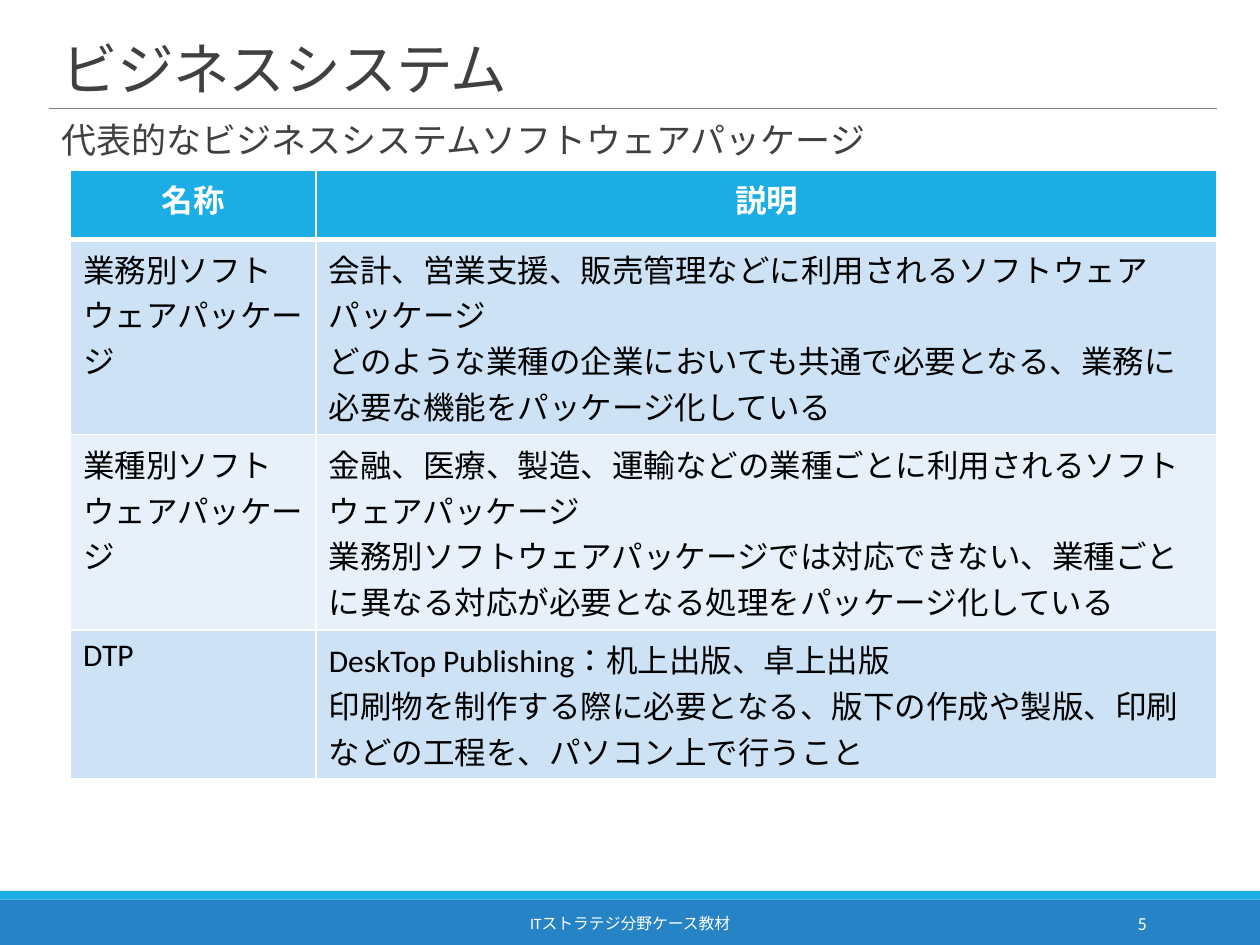
from typing import NamedTuple

from lxml.etree import SubElement
from pptx import Presentation
from pptx.dml.color import RGBColor
from pptx.enum.lang import MSO_LANGUAGE_ID as Language
from pptx.enum.shapes import MSO_CONNECTOR as Connector, MSO_SHAPE as Shape
from pptx.enum.text import MSO_ANCHOR as Anchor, PP_ALIGN as Align
from pptx.oxml.ns import qn
from pptx.util import Inches, Pt

FONT = "Calibri"
WHITE, BLACK, GRAY = "FFFFFF", "000000", "404040"
CYAN, BLUE = "1CADE4", "2683C6"
BANDS = ("CDE3F5", "E8F1FA")


class Bar(NamedTuple):
    top: float
    height: float
    color: str


class Package(NamedTuple):
    name: str
    description: str
    height: float


BARS = (Bar(7.14, 0.36, BLUE), Bar(7.07, 0.07, CYAN))
HEADER = Package("名称", "説明", 0.55)
PACKAGES = (
    Package(
        "業務別ソフトウェアパッケージ",
        "会計、営業支援、販売管理などに利用されるソフトウェアパッケージ\n"
        "どのような業種の企業においても共通で必要となる、業務に必要な機能をパッケージ化している",
        1.55,
    ),
    Package(
        "業種別ソフトウェアパッケージ",
        "金融、医療、製造、運輸などの業種ごとに利用されるソフトウェアパッケージ\n"
        "業務別ソフトウェアパッケージでは対応できない、業種ごとに異なる対応が必要となる処理をパッケージ化している",
        1.55,
    ),
    Package(
        "DTP",
        "DeskTop Publishing：机上出版、卓上出版\n"
        "印刷物を制作する際に必要となる、版下の作成や製版、印刷などの工程を、パソコン上で行うこと",
        1.18,
    ),
)


def rgb(color: str) -> RGBColor:
    return RGBColor.from_string(color)


def write(frame, text: str, *, size: float, color: str, bold: bool = False,
          align=Align.LEFT, line_spacing: float = 1.0, tracking: int = 0) -> None:
    frame.word_wrap = True
    for index, line in enumerate(text.split("\n")):
        para = frame.add_paragraph() if index else frame.paragraphs[0]
        para.alignment = align
        para.line_spacing = line_spacing
        span = para.add_run()
        span.text = line
        span.font.name = FONT
        span.font.size = Pt(size)
        span.font.bold = bold
        span.font.color.rgb = rgb(color)
        span.font.language_id = Language.JAPANESE
        if tracking:
            span.font._element.set("spc", str(tracking))


def add_text(page, text: str, left: float, top: float, width: float, height: float,
             *, anchor=Anchor.TOP, **style) -> None:
    box = page.shapes.add_textbox(Inches(left), Inches(top), Inches(width), Inches(height))
    box.text_frame.vertical_anchor = anchor
    write(box.text_frame, text, **style)


def add_bar(page, bar: Bar) -> None:
    shape = page.shapes.add_shape(Shape.RECTANGLE, 0, Inches(bar.top), Inches(10), Inches(bar.height))
    shape.shadow.inherit = False
    shape.fill.solid()
    shape.fill.fore_color.rgb = rgb(bar.color)
    shape.line.fill.background()


def add_rule(page) -> None:
    rule = page.shapes.add_connector(
        Connector.STRAIGHT, Inches(0.39), Inches(0.86), Inches(9.66), Inches(0.86))
    rule.line.color.rgb = rgb("808080")
    rule.line.width = Pt(0.5)
    SubElement(rule._element.spPr, qn("a:effectLst"))


def paint_cell(cell, fill: str, top: float, bottom: float) -> None:
    cell.fill.solid()
    cell.fill.fore_color.rgb = rgb(fill)
    properties = cell._tc.get_or_add_tcPr()
    for index, (side, width) in enumerate((("L", 1), ("R", 1), ("T", top), ("B", bottom))):
        edge = properties.makeelement(qn(f"a:ln{side}"), {"w": str(Pt(width))})
        solid = SubElement(edge, qn("a:solidFill"))
        SubElement(solid, qn("a:srgbClr"), val=WHITE)
        properties.insert(index, edge)


def add_package_table(page) -> None:
    rows = (HEADER, *PACKAGES)
    height = sum(row.height for row in rows)
    table = page.shapes.add_table(
        len(rows), 2, Inches(0.56), Inches(1.35), Inches(9.1), Inches(height)).table
    for column, width in zip(table.columns, (1.95, 7.15)):
        column.width = Inches(width)
    for index, row in enumerate(rows):
        table.rows[index].height = Inches(row.height)
        is_header = index == 0
        fill = CYAN if is_header else BANDS[(index - 1) % 2]
        for column, text in enumerate((row.name, row.description)):
            cell = table.cell(index, column)
            paint_cell(cell, fill, top=3 if index == 1 else 1, bottom=3 if is_header else 1)
            write(cell.text_frame, text, size=18, bold=is_header,
                  color=WHITE if is_header else BLACK,
                  align=Align.CENTER if is_header else Align.LEFT)


def main() -> None:
    deck = Presentation()
    deck.slide_width, deck.slide_height = Inches(10), Inches(7.5)
    page = deck.slides.add_slide(deck.slide_layouts[6])
    for bar in BARS:
        add_bar(page, bar)
    add_rule(page)
    add_text(page, "ビジネスシステム", 0.39, 0.31, 9.27, 0.55, anchor=Anchor.BOTTOM,
             size=32.4, color=GRAY, line_spacing=0.85, tracking=-50)
    add_text(page, "代表的なビジネスシステムソフトウェアパッケージ", 0.39, 0.93, 9.27, 0.42,
             size=20, color=GRAY, line_spacing=0.9)
    add_text(page, "ITストラテジ分野ケース教材", 3.02, 7.19, 3.96, 0.28, anchor=Anchor.MIDDLE,
             size=9, color=WHITE, align=Align.CENTER)
    add_text(page, "5", 8.12, 7.19, 1.08, 0.28, anchor=Anchor.MIDDLE,
             size=10.5, color=WHITE, align=Align.RIGHT)
    add_package_table(page)
    deck.save("out.pptx")


if __name__ == "__main__":
    main()
